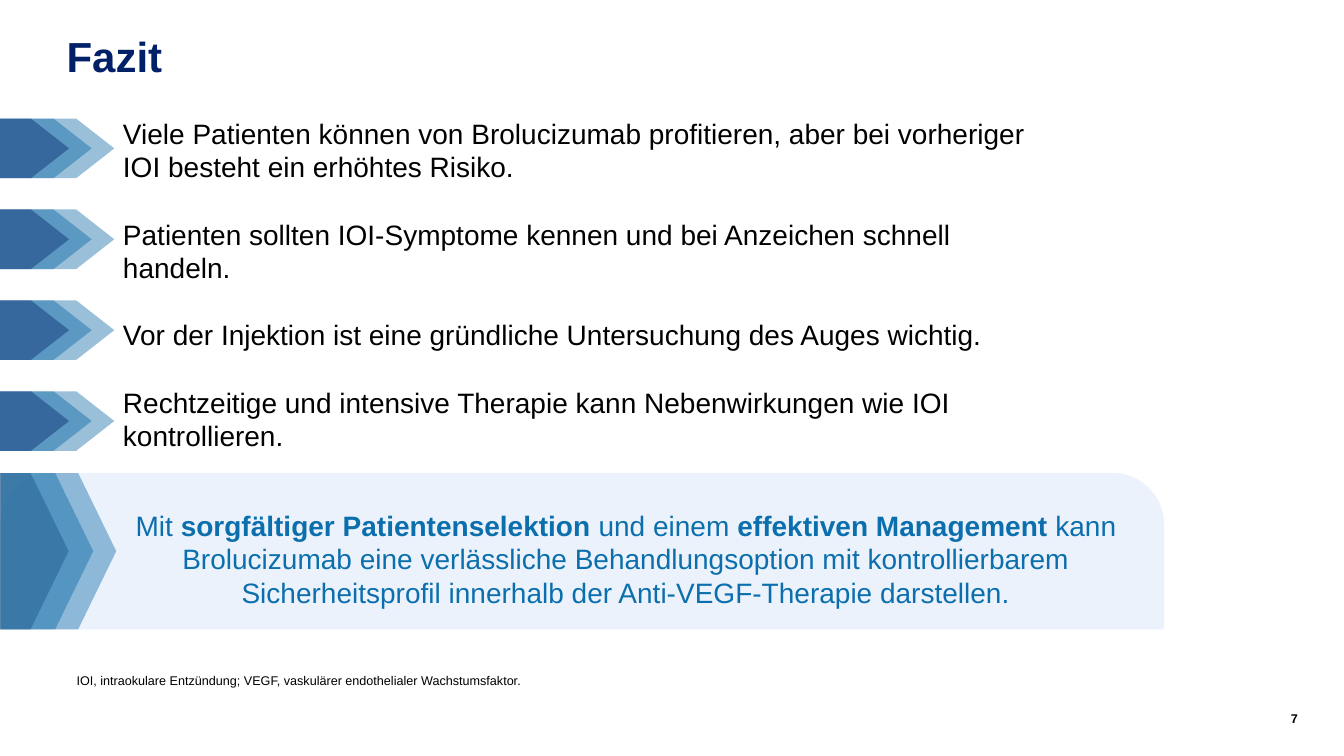
from dataclasses import dataclass

from lxml.etree import SubElement
from pptx import Presentation
from pptx.dml.color import RGBColor
from pptx.enum.shapes import MSO_SHAPE as Preset
from pptx.enum.text import MSO_ANCHOR as Anchor, PP_ALIGN as Align
from pptx.oxml.ns import qn
from pptx.shapes.autoshape import Shape
from pptx.slide import Slide
from pptx.text.text import TextFrame
from pptx.util import Cm, Pt

FONT = "Arial"
BLACK, NAVY, BLUE = "000000", "002068", "0C6FAD"
ARROW_OPACITY = 40
POINT_LENGTH = 0.96  # cm
ARROW_LENGTH = 12.27  # cm, bleeds over the left edge of the slide
ARROW_TOP, ARROW_STEP, ARROW_HEIGHT = 2.99, 2.29, 1.5
CALLOUT_TOP, CALLOUT_HEIGHT = 11.92, 3.94


@dataclass
class Layer:
    tip: float
    color: str
    length: float = ARROW_LENGTH


@dataclass
class Label:
    left: float
    top: float
    width: float
    height: float
    paragraphs: list[str]
    size: float
    color: str = BLACK
    bold: bool = False
    align: Align = Align.LEFT
    anchor: Anchor = Anchor.TOP
    inset: tuple[float, float] = (0, 0)
    line_spacing: float = 1.0
    space_after: float = 0


BULLET_LAYERS = [Layer(2.31, "0060A1"), Layer(2.88, "0060A1"), Layer(1.74, NAVY)]
CALLOUT_LAYERS = [
    Layer(2.93, "0061A2", 2.93),
    Layer(1.73, "1B416A", 1.76),
    Layer(2.35, "0061A2", 2.33),
]

CONCLUSIONS = [
    "Viele Patienten können von Brolucizumab profitieren, aber bei vorheriger "
    "IOI besteht ein erhöhtes Risiko.",
    "Patienten sollten IOI-Symptome kennen und bei Anzeichen schnell handeln.",
    "Vor der Injektion ist eine gründliche Untersuchung des Auges wichtig.",
    "Rechtzeitige und intensive Therapie kann Nebenwirkungen wie IOI kontrollieren.",
]

# Text and whether it is bold
KEY_MESSAGE = [
    ("Mit ", False),
    ("sorgfältiger Patientenselektion ", True),
    ("und einem ", False),
    ("effektiven Management ", True),
    ("kann Brolucizumab eine verlässliche Behandlungsoption mit kontrollierbarem "
     "Sicherheitsprofil innerhalb der Anti-VEGF-Therapie darstellen.", False),
]

LABELS = [
    Label(1.68, 0.86, 20.45, 2.97, ["Fazit"], 30, NAVY, bold=True, line_spacing=0.95),
    Label(3.1, 2.93, 23.42, 2.59, CONCLUSIONS, 20, space_after=24),
    Label(1.68, 15.86, 23.62, 1.63,
          ["IOI, intraokulare Entzündung; VEGF, vaskulärer endothelialer Wachstumsfaktor."],
          9, anchor=Anchor.BOTTOM, inset=(0.25, 0.13), line_spacing=0.95),
    Label(31.41, 17.91, 1.3, 0.51, ["7"], 9, bold=True, align=Align.RIGHT),
]


def rgb(color: str) -> RGBColor:
    return RGBColor.from_string(color)


def set_insets(text_frame: TextFrame, left: float, top: float,
               right: float, bottom: float) -> None:
    text_frame.margin_left, text_frame.margin_top = Cm(left), Cm(top)
    text_frame.margin_right, text_frame.margin_bottom = Cm(right), Cm(bottom)


def format_font(font, size: float, color: str, bold: bool) -> None:
    font.name, font.size, font.bold = FONT, Pt(size), bold
    font.color.rgb = rgb(color)


def add_preset(slide: Slide, preset: Preset, left: float, top: float, width: float,
               height: float, color: str) -> Shape:
    """Add a flat, borderless shape."""
    shape = slide.shapes.add_shape(preset, Cm(left), Cm(top), Cm(width), Cm(height))
    shape.shadow.inherit = False
    shape.fill.solid()
    shape.fill.fore_color.rgb = rgb(color)
    shape.line.fill.background()
    return shape


def add_arrow(slide: Slide, top: float, height: float, layers: list[Layer]) -> None:
    for layer in layers:
        shape = add_preset(slide, Preset.PENTAGON, layer.tip - layer.length, top,
                           layer.length, height, layer.color)
        shape.adjustments[0] = POINT_LENGTH / min(layer.length, height)
        color_element = shape.fill._xPr.find(qn("a:solidFill"))[0]
        SubElement(color_element, qn("a:alpha"), val=str(ARROW_OPACITY * 1000))


def add_label(slide: Slide, label: Label) -> None:
    box = slide.shapes.add_textbox(Cm(label.left), Cm(label.top),
                                   Cm(label.width), Cm(label.height))
    text_frame = box.text_frame
    text_frame.word_wrap = True
    text_frame.vertical_anchor = label.anchor
    set_insets(text_frame, *label.inset, *label.inset)
    text_frame.text = "\n".join(label.paragraphs)
    for paragraph in text_frame.paragraphs:
        paragraph.alignment = label.align
        paragraph.line_spacing = label.line_spacing
        paragraph.space_after = Pt(label.space_after)
        for run in paragraph.runs:
            format_font(run.font, label.size, label.color, label.bold)


def add_callout(slide: Slide) -> None:
    shape = add_preset(slide, Preset.ROUND_2_SAME_RECTANGLE, 0, CALLOUT_TOP, 29.34,
                       CALLOUT_HEIGHT, "EBF2FB")
    shape.adjustments[0], shape.adjustments[1] = 0.33, 0
    text_frame = shape.text_frame
    text_frame.word_wrap = True
    text_frame.vertical_anchor = Anchor.MIDDLE
    set_insets(text_frame, 2.21, 0, 0, 0)
    paragraph = text_frame.paragraphs[0]
    paragraph.alignment = Align.CENTER
    for text, bold in KEY_MESSAGE:
        run = paragraph.add_run()
        run.text = text
        format_font(run.font, 20, BLUE, bold)


def main() -> None:
    presentation = Presentation()
    presentation.slide_width, presentation.slide_height = Cm(33.87), Cm(19.05)
    slide = presentation.slides.add_slide(presentation.slide_layouts[6])

    # Key message with its large arrow
    add_callout(slide)
    add_arrow(slide, CALLOUT_TOP, CALLOUT_HEIGHT, CALLOUT_LAYERS)

    # One arrow per conclusion
    for index in range(len(CONCLUSIONS)):
        add_arrow(slide, ARROW_TOP + index * ARROW_STEP, ARROW_HEIGHT, BULLET_LAYERS)

    # Title, conclusions, footnote and page number
    for label in LABELS:
        add_label(slide, label)

    presentation.save("out.pptx")


if __name__ == "__main__":
    main()
